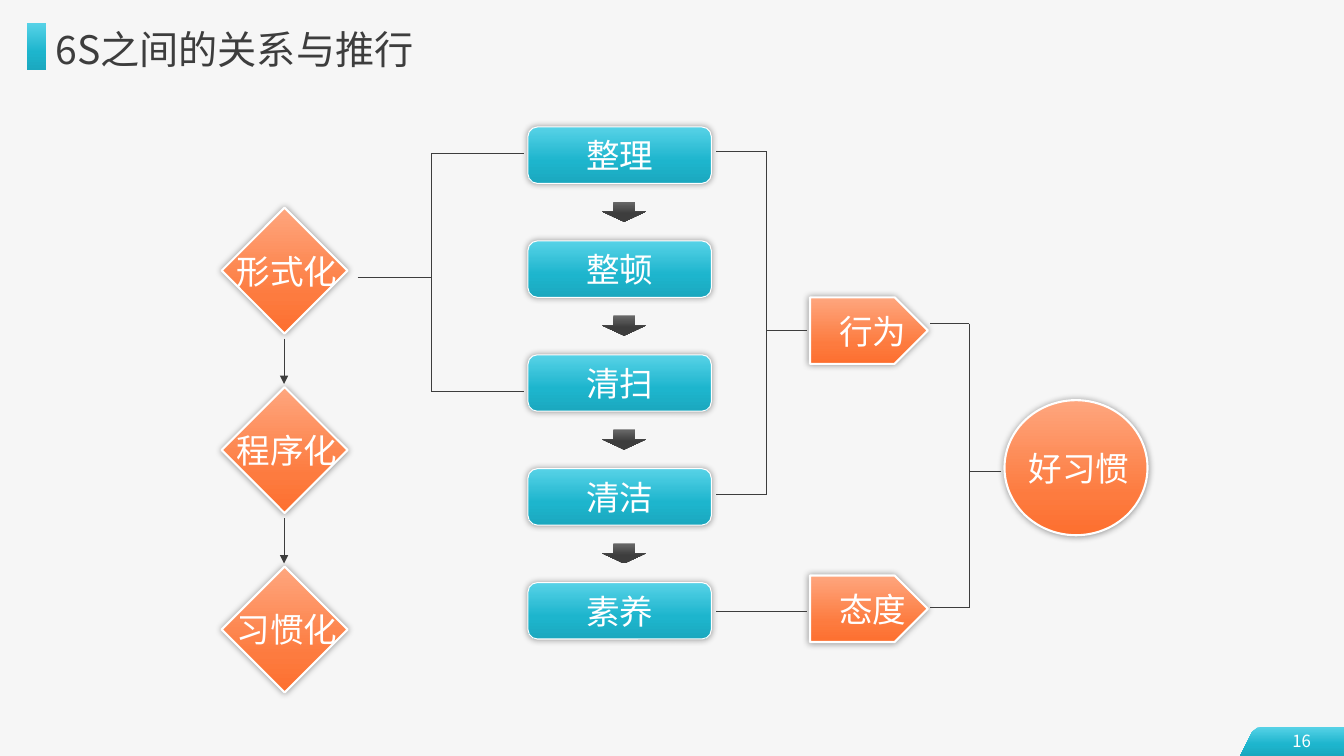
"""Build the slide on how the 6S steps relate and are carried out."""
from pptx import Presentation, util as u
from pptx.dml import color
from pptx.enum import shapes, text
from pptx.oxml import ns, xmlchemy as xc

KIND = shapes.MSO_SHAPE
TEAL = [(0, "57D2E7"), (60, "1DB5CD"), (100, "1BA8BF")]
WARM = [(0, "FEA67E"), (70, "FD7B3F"), (100, "FD6F2F")]
GREY = [(0, "696969"), (59, "3D3D3D"), (100, "3D3D3D")]
DARK, WHITE = "3D3D3D", "FFFFFF"


def rgb(code):
    """Turn a hex string into a colour."""
    return color.RGBColor.from_string(code)


def node(root, tag, **attrs):
    """Add a child element with attributes and return it."""
    item = xc.OxmlElement(tag)
    for key, val in attrs.items():
        item.set(key, str(val))
    root.append(item)
    return item


class Deck:
    """Hold the style and the current slide."""

    font = "Noto Sans CJK SC"

    def __init__(self, wide, high, back):
        """Open a deck with one blank slide."""
        self.prs = Presentation()
        self.prs.slide_width = u.Inches(wide)
        self.prs.slide_height = u.Inches(high)
        self.slide = self.prs.slides.add_slide(self.prs.slide_layouts[6])
        fill = self.slide.background.fill
        fill.solid()
        fill.fore_color.rgb = rgb(back)

    def paint(self, shape, stops, edge=0):
        """Fill with a downward gradient; an edge brings a soft shadow."""
        shape.shadow.inherit = False
        shape.fill.gradient()
        shape.fill.gradient_angle = 270
        props = shape._element.spPr
        ramp = props.find(ns.qn("a:gradFill")).find(ns.qn("a:gsLst"))
        for old in list(ramp):
            ramp.remove(old)
        for pos, code in stops:
            stop = node(ramp, "a:gs", pos=pos * 1000)
            node(stop, "a:srgbClr", val=code)
        if not edge:
            shape.line.fill.background()
            return
        shape.line.color.rgb = rgb(WHITE)
        shape.line.width = u.Pt(edge)
        glow = node(props.find(ns.qn("a:effectLst")), "a:outerShdw",
                    blurRad=u.Pt(5), dist=0, dir=0, algn="ctr",
                    rotWithShape=0)
        tint = node(glow, "a:srgbClr", val="000000")
        node(tint, "a:alpha", val=40000)

    def letter(self, shape, words, size, ink=WHITE, left=0, mid=True):
        """Put one line of text in a shape."""
        frame = shape.text_frame
        frame.word_wrap = not mid
        frame.margin_left = u.Inches(left)
        frame.margin_right = frame.margin_top = frame.margin_bottom = 0
        frame.vertical_anchor = text.MSO_ANCHOR.MIDDLE
        para = frame.paragraphs[0]
        para.alignment = text.PP_ALIGN.CENTER if mid else text.PP_ALIGN.LEFT
        run = para.add_run()
        run.text = words
        run.font.size = u.Pt(size)
        run.font.color.rgb = rgb(ink)
        run.font.name = self.font
        node(run.font._element, "a:ea", typeface=self.font)

    def shape(self, kind, at, stops, words="", edge=0, left=0):
        """Add a preset shape, with text if there is any."""
        item = self.slide.shapes.add_shape(kind, *map(u.Inches, at))
        self.paint(item, stops, edge)
        if words:
            self.letter(item, words, 24, left=left)

    def label(self, at, words, size, ink, mid):
        """Add a text box."""
        box = self.slide.shapes.add_textbox(*map(u.Inches, at))
        self.letter(box, words, size, ink, mid=mid)

    def free(self, dots, stops):
        """Add a closed outline through the given points."""
        dots = [tuple(map(u.Inches, dot)) for dot in dots]
        pen = self.slide.shapes.build_freeform(*dots[0])
        pen.add_line_segments(dots[1:])
        self.paint(pen.convert_to_shape(), stops)

    def line(self, x1, y1, x2, y2, head=False):
        """Add a thin line, with an arrowhead at its end if asked."""
        item = self.slide.shapes.add_connector(
            shapes.MSO_CONNECTOR.STRAIGHT, *map(u.Inches, (x1, y1, x2, y2)))
        item.line.color.rgb = rgb(DARK)
        item.line.width = u.Pt(0.75)
        props = item._element.spPr
        if head:
            node(props.find(ns.qn("a:ln")), "a:tailEnd", type="triangle")
        node(props, "a:effectLst")

    def brace(self, spine, side, top, low, stem, mid):
        """Tie two branches on one side to a stem on the other."""
        for y in (top, low):
            self.line(spine, y, side, y)
        self.line(spine, top, spine, low)
        self.line(stem, mid, spine, mid)


def main():
    """Draw the slide and save it."""
    deck = Deck(13.34, 7.5, "F6F6F6")
    deck.free([(13.34, 7.21), (12.53, 7.21), (12.48, 7.22), (12.43, 7.26),
               (12.31, 7.5), (13.34, 7.5)], TEAL)
    deck.label((12.71, 7.2, 0.42, 0.3), "16", 12, WHITE, True)
    deck.label((0.55, 0.25, 6.92, 0.47), "6S之间的关系与推行", 28, DARK, False)
    deck.shape(KIND.RECTANGLE, (0.27, 0.23, 0.19, 0.47), TEAL)

    steps = ["整理", "整顿", "清扫", "清洁", "素养"]
    for i, step in enumerate(steps):
        y = 1.26 + 1.13 * i
        deck.shape(KIND.ROUNDED_RECTANGLE, (5.24, y, 1.82, 0.56), TEAL,
                   step, 0.75)
        if i < len(steps) - 1:
            deck.shape(KIND.DOWN_ARROW, (5.98, y + 0.74, 0.43, 0.2), GREY)

    stages = ["形式化", "程序化", "习惯化"]
    for i, stage in enumerate(stages):
        y = 2.06 + 1.78 * i
        deck.shape(KIND.DIAMOND, (2.2, y, 1.25, 1.25), WARM, stage, 1.5, 0.05)
        if i < len(stages) - 1:
            deck.line(2.82, y + 1.3, 2.82, y + 1.75, True)

    for y, trait in ((2.95, "行为"), (5.71, "态度")):
        deck.shape(KIND.PENTAGON, (8.04, y, 1.17, 0.66), WARM,
                   trait, 1.5, 0.24)
    deck.shape(KIND.OVAL, (9.97, 3.97, 1.42, 1.34), WARM, "好习惯", 1.5, 0.06)

    deck.brace(4.28, 5.2, 1.52, 3.88, 3.55, 2.75)
    deck.brace(7.61, 7.11, 1.5, 4.91, 8.01, 3.28)
    deck.brace(9.62, 9.23, 3.21, 6.03, 9.94, 4.68)
    deck.line(8.01, 6.07, 7.11, 6.07)
    deck.prs.save("out.pptx")


if __name__ == "__main__":
    main()
